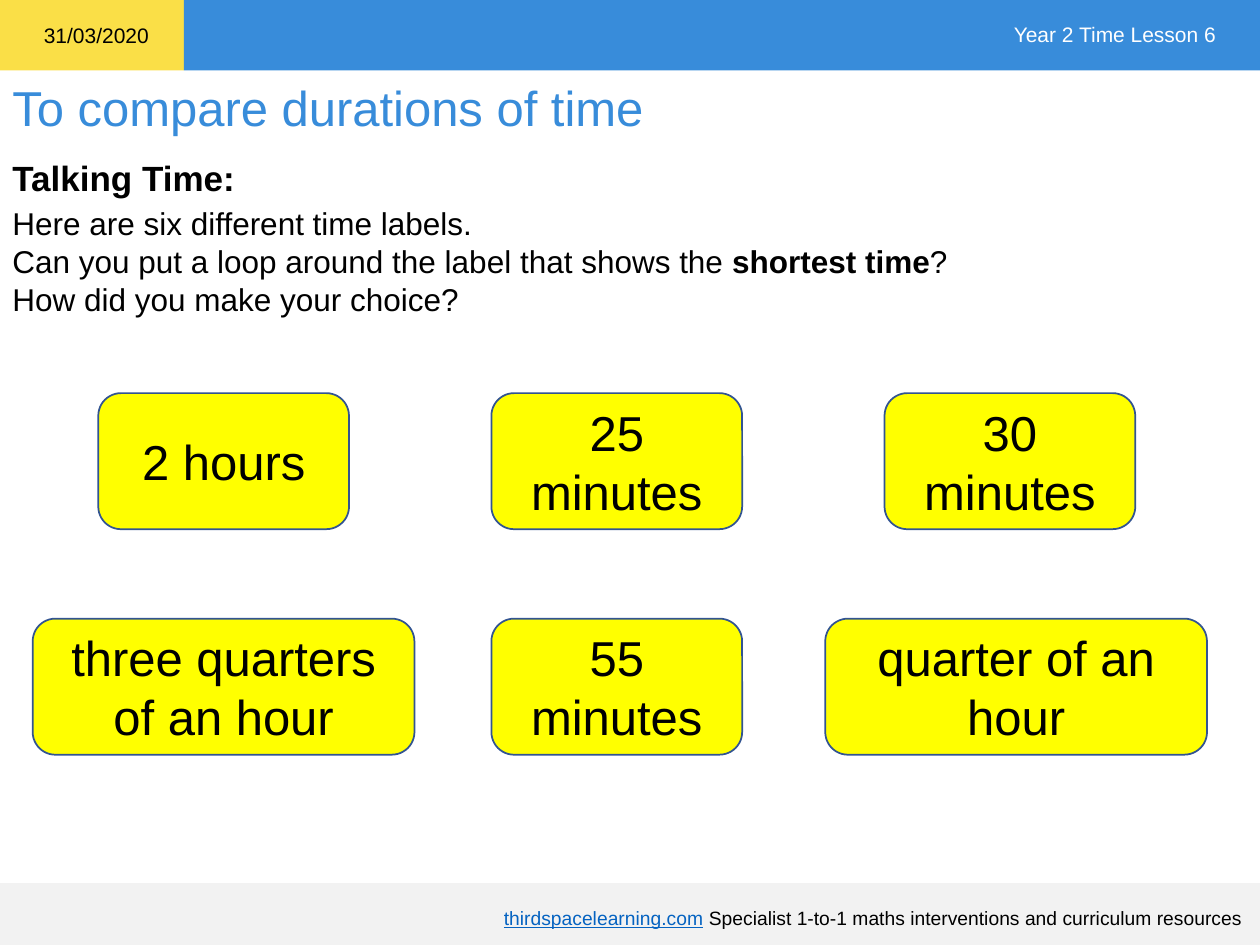
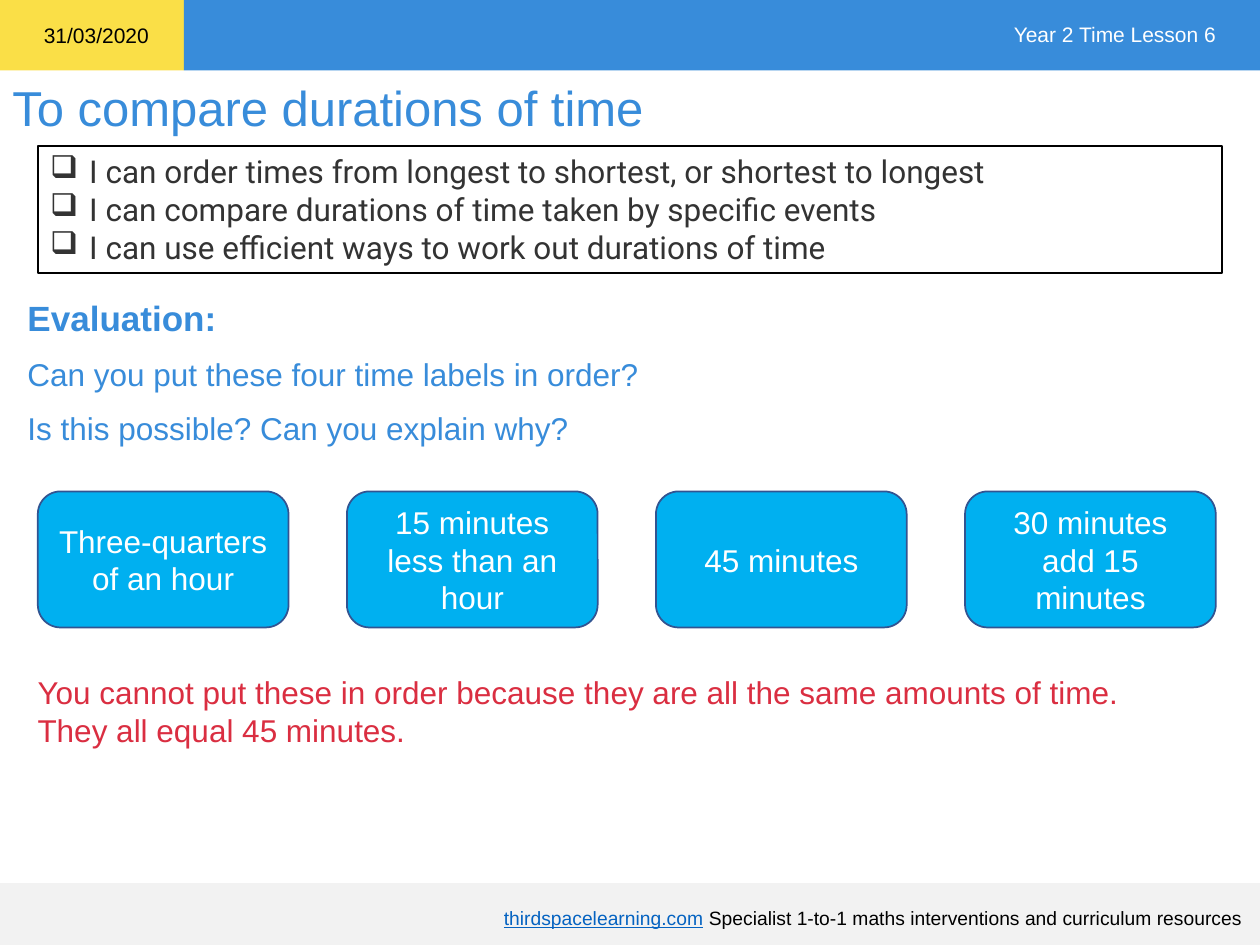
from dataclasses import dataclass, field
from typing import Any, NamedTuple

from lxml.etree import SubElement
from pptx import Presentation
from pptx.dml.color import RGBColor
from pptx.enum.shapes import MSO_SHAPE as Preset
from pptx.enum.text import MSO_ANCHOR as Anchor, PP_ALIGN as Align
from pptx.oxml.ns import qn
from pptx.util import Inches, Pt

COLUMNS, ROWS = 100, 75
SLIDE_WIDTH, SLIDE_HEIGHT = Inches(10), Inches(7.5)
COLOURS = {
    "black": "000000", "white": "FFFFFF", "blue": "388CDA", "date": "FADF47",
    "footer": "F2F2F2", "link": "0563C1", "yellow": "FFFF00", "cyan": "00B0F0",
    "outline": "325491", "ink": "333333", "answer": "DA2E41",
}
BODY = {"name": "Arial", "size": Pt(18)}
HEADING = BODY | {"size": Pt(20), "bold": True}
LARGE = BODY | {"size": Pt(28)}
SMALL = BODY | {"size": Pt(12)}
FOOTER = BODY | {"size": Pt(11)}
CHECKLIST = BODY | {"name": "Roboto"}
LOOSE = {"line_spacing": 1.07, "space_after": Pt(8)}
RIGHT = {"alignment": Align.RIGHT}
CENTRED = {"alignment": Align.CENTER}


class Area(NamedTuple):
    """Left, top, width and height in grid columns and rows."""
    left: float
    top: float
    width: float
    height: float

    def emu(self) -> tuple[int, ...]:
        column, row = SLIDE_WIDTH / COLUMNS, SLIDE_HEIGHT / ROWS
        return (round(self.left * column), round(self.top * row),
                round(self.width * column), round(self.height * row))


class Run(NamedTuple):
    text: str
    font: dict[str, Any] = BODY
    colour: str = "black"


@dataclass
class Line:
    runs: list[Run]
    layout: dict[str, Any] = field(default_factory=dict)
    bullet: str = ""


@dataclass
class Panel:
    area: Area
    fill: str
    outline: str = ""
    preset: Preset = Preset.RECTANGLE
    lines: list[Line] = field(default_factory=list)
    anchor: Anchor = Anchor.MIDDLE


class Label(NamedTuple):
    text: str
    width: float = 19.9
    shift: float = 0


@dataclass
class LabelRow:
    labels: list[Label]
    first_centre: float
    pitch: float
    top: float
    fill: str
    font: dict[str, Any]
    colour: str


BANDS = [
    Panel(Area(0, 0, 14.6, 5.6), "date"),
    Panel(Area(14.6, 0, 85.4, 5.6), "blue"),
    Panel(Area(0, 70.1, 100, 4.9), "footer"),
]
FRAME_TEXTS = [
    (Area(4.2, 71.4, 95.4, 2.8), [Line([
        Run("thirdspacelearning.com", FOOTER | {"underline": True}, "link"),
        Run(" Specialist 1-to-1 maths interventions and curriculum resources", FOOTER),
    ], RIGHT)]),
    (Area(0, 5.7, 97.7, 5.7), [Line([Run("To compare durations of time", LARGE, "blue")])]),
    (Area(2.5, 1.3, 11, 3), [Line([Run("31/03/2020", SMALL)])]),
    (Area(78, 1.2, 19.5, 3), [Line([Run("Year 2 Time Lesson 6", SMALL, "white")], RIGHT)]),
]


def apply(target: Any, formats: dict[str, Any]) -> None:
    for attribute, value in formats.items():
        setattr(target, attribute, value)


def rgb(colour: str) -> RGBColor:
    return RGBColor.from_string(COLOURS[colour])


def add_bullet(paragraph: Any, mark: str) -> None:
    properties = paragraph._p.get_or_add_pPr()
    apply_indent = {"marL": Inches(0.31), "indent": -Inches(0.31)}
    for key, length in apply_indent.items():
        properties.set(key, str(int(length)))
    SubElement(properties, qn("a:buChar")).set("char", mark)


def write(frame: Any, lines: list[Line], anchor: Anchor = Anchor.TOP) -> None:
    apply(frame, {"word_wrap": True, "vertical_anchor": anchor})
    for index, line in enumerate(lines):
        paragraph = frame.add_paragraph() if index else frame.paragraphs[0]
        apply(paragraph, {"alignment": Align.LEFT} | line.layout)
        if line.bullet:
            add_bullet(paragraph, line.bullet)
        for piece in line.runs:
            run = paragraph.add_run()
            run.text = piece.text
            apply(run.font, piece.font)
            run.font.color.rgb = rgb(piece.colour)


def add_text(slide: Any, area: Area, lines: list[Line]) -> None:
    write(slide.shapes.add_textbox(*area.emu()).text_frame, lines)


def add_panel(slide: Any, panel: Panel) -> None:
    shape = slide.shapes.add_shape(panel.preset, *panel.area.emu())
    shape.shadow.inherit = False
    shape.fill.solid()
    shape.fill.fore_color.rgb = rgb(panel.fill)
    if panel.outline:
        shape.line.color.rgb = rgb(panel.outline)
        shape.line.width = Pt(1)
    else:
        shape.line.fill.background()
    write(shape.text_frame, panel.lines, panel.anchor)


def add_label_row(slide: Any, row: LabelRow) -> None:
    for position, label in enumerate(row.labels):
        centre = row.first_centre + position * row.pitch + label.shift
        area = Area(centre - label.width / 2, row.top, label.width, 10.8)
        caption = Line([Run(label.text, row.font, row.colour)], CENTRED)
        add_panel(slide, Panel(area, row.fill, "outline", Preset.ROUNDED_RECTANGLE, [caption]))


def add_lesson_slide(deck: Any) -> Any:
    """Add a blank slide with the bands, title, date and footer."""
    slide = deck.slides.add_slide(deck.slide_layouts[6])
    for band in BANDS:
        add_panel(slide, band)
    for area, lines in FRAME_TEXTS:
        add_text(slide, area, lines)
    return slide


def build_talking_time(deck: Any) -> None:
    slide = add_lesson_slide(deck)
    add_text(slide, Area(0, 11.7, 21, 4.4), [Line([Run("Talking Time:", HEADING)], LOOSE)])
    add_text(slide, Area(0, 15.7, 93.8, 10.1), [
        Line([Run("Here are six different time labels.")]),
        Line([Run("Can you put a loop around the label that shows the "),
              Run("shortest time", BODY | {"bold": True}), Run("?")]),
        Line([Run("How did you make your choice?")]),
    ])
    label_rows = {
        31.2: [Label("2 hours"), Label("25 minutes"), Label("30 minutes")],
        49.1: [Label("three quarters of an hour", 30.3), Label("55 minutes"),
               Label("quarter of an hour", 30.3, 0.5)],
    }
    for top, labels in label_rows.items():
        add_label_row(slide, LabelRow(labels, 17.75, 31.2, top, "yellow", LARGE, "black"))


def build_evaluation(deck: Any) -> None:
    slide = add_lesson_slide(deck)
    add_text(slide, Area(1.2, 22.8, 55, 13.2), [
        Line([Run("Evaluation:", HEADING, "blue")], LOOSE),
        Line([Run("Can you put these four time labels in order?", BODY, "blue")], LOOSE),
        Line([Run("Is this possible? Can you explain why?", BODY, "blue")], LOOSE),
    ])
    goals = [
        "I can order times from longest to shortest, or shortest to longest",
        "I can compare durations of time taken by specific events",
        "I can use efficient ways to work out durations of time",
    ]
    goal_lines = [Line([Run(goal, CHECKLIST, "ink")], bullet="❑") for goal in goals]
    add_panel(slide, Panel(Area(3, 11.6, 94, 10.1), "white", "black",
                           lines=goal_lines, anchor=Anchor.TOP))
    equal_times = [Label("Three-quarters of an hour"), Label("15 minutes less than an hour"),
                   Label("45 minutes"), Label("30 minutes add 15 minutes")]
    add_label_row(slide, LabelRow(equal_times, 12.95, 24.53, 39, "cyan", BODY, "white"))
    add_text(slide, Area(2, 52.9, 90, 7.1), [
        Line([Run("You cannot put these in order because they are all the same amounts of time.",
                  BODY, "answer")]),
        Line([Run("They all equal 45 minutes.", BODY, "answer")]),
    ])


def main() -> None:
    deck = Presentation()
    apply(deck, {"slide_width": SLIDE_WIDTH, "slide_height": SLIDE_HEIGHT})
    build_talking_time(deck)
    build_evaluation(deck)
    deck.save("out.pptx")


if __name__ == "__main__":
    main()
